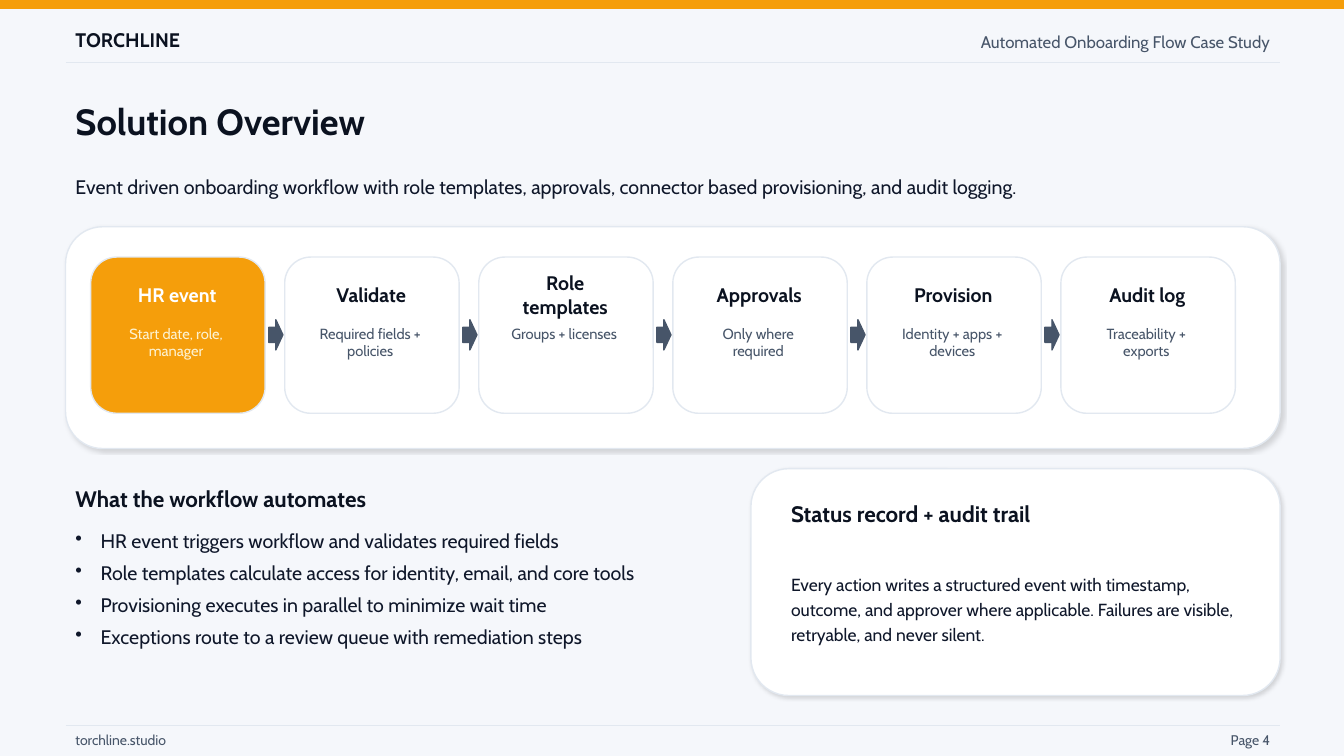
from lxml.etree import SubElement
from pptx import Presentation
from pptx.dml.color import RGBColor
from pptx.enum.shapes import MSO_CONNECTOR as Line, MSO_SHAPE as Kind
from pptx.enum.text import MSO_ANCHOR as Anchor, PP_ALIGN as Align
from pptx.oxml.ns import qn
from pptx.util import Pt

FONT = "Cabin"
PAGE = RGBColor(0xF5, 0xF7, 0xFB)
AMBER = RGBColor(0xF5, 0x9E, 0x0B)
CREAM = RGBColor(0xFD, 0xF2, 0xD0)
WHITE = RGBColor(0xFF, 0xFF, 0xFF)
INK = RGBColor(0x0B, 0x12, 0x20)
BODY = RGBColor(0x0F, 0x17, 0x2A)
SLATE = RGBColor(0x47, 0x55, 0x69)
RULE = RGBColor(0xE2, 0xE8, 0xF0)

LEFT, RIGHT = 46.8, 914.4
WIDE = RIGHT - LEFT
STEP_X, STEP_Y, STEP_W, STEP_H = 64.8, 183.6, 124.6, 111.6
PITCH = 138.6

STEPS = [
    ("HR event", "Start date, role, manager"),
    ("Validate", "Required fields + policies"),
    ("Role templates", "Groups + licenses"),
    ("Approvals", "Only where required"),
    ("Provision", "Identity + apps + devices"),
    ("Audit log", "Traceability + exports"),
]
TASKS = [
    "HR event triggers workflow and validates required fields",
    "Role templates calculate access for identity, email, and core tools",
    "Provisioning executes in parallel to minimize wait time",
    "Exceptions route to a review queue with remediation steps",
]


def add_box(slide, kind, x, y, w, h, fill, edge):
    box = slide.shapes.add_shape(kind, Pt(x), Pt(y), Pt(w), Pt(h))
    box.shadow.inherit = False
    box.fill.solid()
    box.fill.fore_color.rgb = fill
    box.line.color.rgb = edge
    box.line.width = Pt(1)
    return box


def add_panel(slide, x, y, w, h):
    """White rounded panel with a soft shadow."""
    panel = add_box(slide, Kind.ROUNDED_RECTANGLE, x, y, w, h, WHITE, RULE)
    effects = panel._element.spPr.find(qn("a:effectLst"))
    shade = SubElement(effects, qn("a:outerShdw"), blurRad=str(Pt(3)),
                       dist=str(Pt(1.5)), dir=str(45 * 60000), rotWithShape="0")
    color = SubElement(shade, qn("a:srgbClr"), val="000000")
    SubElement(color, qn("a:alpha"), val="15000")


def add_rule(slide, y):
    rule = slide.shapes.add_connector(Line.STRAIGHT, Pt(LEFT), Pt(y), Pt(RIGHT), Pt(y))
    rule.line.color.rgb = RULE
    rule.line.width = Pt(1)
    SubElement(rule._element.spPr, qn("a:effectLst"))


def add_text(slide, lines, x, y, w, h, size, color, bold=False,
             align=Align.LEFT, anchor=Anchor.MIDDLE):
    frame = slide.shapes.add_textbox(Pt(x), Pt(y), Pt(w), Pt(h)).text_frame
    frame.word_wrap = True
    frame.vertical_anchor = anchor
    frame.text = "\n".join(lines) if isinstance(lines, list) else lines
    for para in frame.paragraphs:
        para.alignment = align
        para.font.name = FONT
        para.font.size = Pt(size)
        para.font.bold = bold
        para.font.color.rgb = color
    return frame


def add_list(slide, lines, x, y, w, h):
    frame = add_text(slide, lines, x, y, w, h, 14, BODY, anchor=Anchor.TOP)
    for para in frame.paragraphs:
        para.space_after = Pt(6)
        props = para._p.get_or_add_pPr()
        props.set("marL", str(Pt(18)))
        props.set("indent", str(-Pt(18)))
        mark = props.makeelement(qn("a:buChar"), {"char": "•"})
        props.find(qn("a:defRPr")).addprevious(mark)


def add_step(slide, index, title, note):
    x = STEP_X + index * PITCH
    first = index == 0
    add_box(slide, Kind.ROUNDED_RECTANGLE, x, STEP_Y, STEP_W, STEP_H,
            AMBER if first else WHITE, RULE)
    add_text(slide, title, x + 11, 198, 101.5, 25.2, 14,
             WHITE if first else INK, True, Align.CENTER)
    add_text(slide, note, x + 12.8, 228.2, 96.5, 57.6, 10.5,
             CREAM if first else SLATE, False, Align.CENTER, Anchor.TOP)
    if index < len(STEPS) - 1:
        add_box(slide, Kind.RIGHT_ARROW, x + 127.2, 228.4, 10.1, 21.6, SLATE, SLATE)


def add_frame(slide):
    """Top band, header and footer."""
    add_box(slide, Kind.RECTANGLE, 0, 0, 960, 5.8, AMBER, AMBER)
    add_text(slide, "TORCHLINE", LEFT, 15.8, 396, 25.2, 14, INK, True)
    add_text(slide, "Automated Onboarding Flow Case Study", 511.2, 17.3, 403.2, 25.2,
             12, SLATE, align=Align.RIGHT)
    add_rule(slide, 44.6)
    add_rule(slide, 518.4)
    add_text(slide, "torchline.studio", LEFT, 519.8, 360, 18, 10, SLATE)
    add_text(slide, "Page 4", 777.6, 519.8, 136.8, 18, 10, SLATE, align=Align.RIGHT)


def main():
    deck = Presentation()
    deck.slide_width, deck.slide_height = Pt(960), Pt(540)
    slide = deck.slides.add_slide(deck.slide_layouts[6])
    slide.background.fill.solid()
    slide.background.fill.fore_color.rgb = PAGE
    add_frame(slide)

    # Title and summary
    add_text(slide, "Solution Overview", LEFT, 68.4, 864, 36, 26, INK, True)
    add_text(slide, "Event driven onboarding workflow with role templates, approvals, "
             "connector based provisioning, and audit logging.",
             LEFT, 111.6, WIDE, 43.2, 14, BODY)

    # Workflow steps
    add_panel(slide, LEFT, 162, WIDE, 158.4)
    for index, (title, note) in enumerate(STEPS):
        add_step(slide, index, title, note)

    # Automated tasks
    add_text(slide, "What the workflow automates", LEFT, 342, 468, 28.8, 16, INK, True)
    add_list(slide, TASKS, LEFT, 374.4, 460.8, 122.4)

    # Audit panel
    add_panel(slide, 536.4, 334.8, 378, 162)
    add_text(slide, "Status record + audit trail", 558, 354.2, 345.6, 25.2, 16, INK, True)
    story = add_text(slide, "Every action writes a structured event with timestamp, "
                     "outcome, and approver where applicable. Failures are visible, "
                     "retryable, and never silent.", 558, 385.2, 345.6, 97.2, 12.5, BODY)
    story.paragraphs[0].line_spacing = 1.2

    deck.save("out.pptx")


if __name__ == "__main__":
    main()
